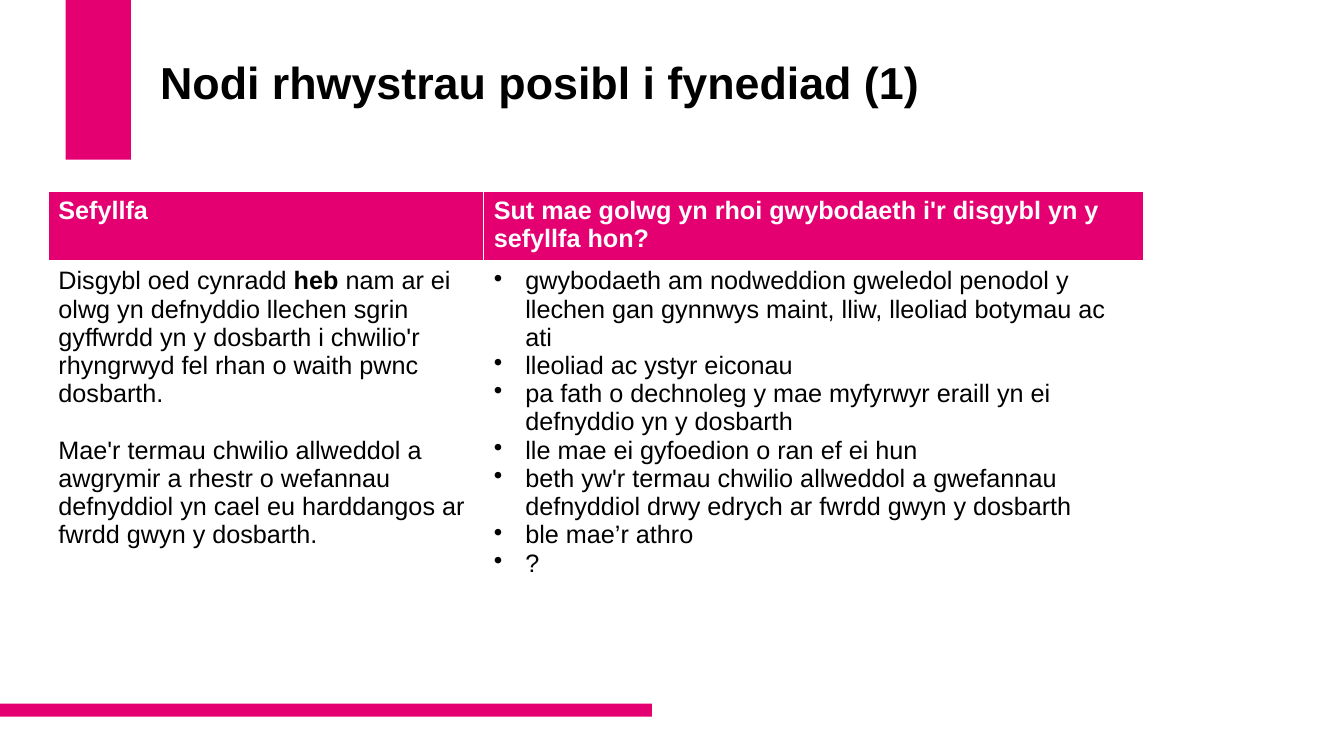
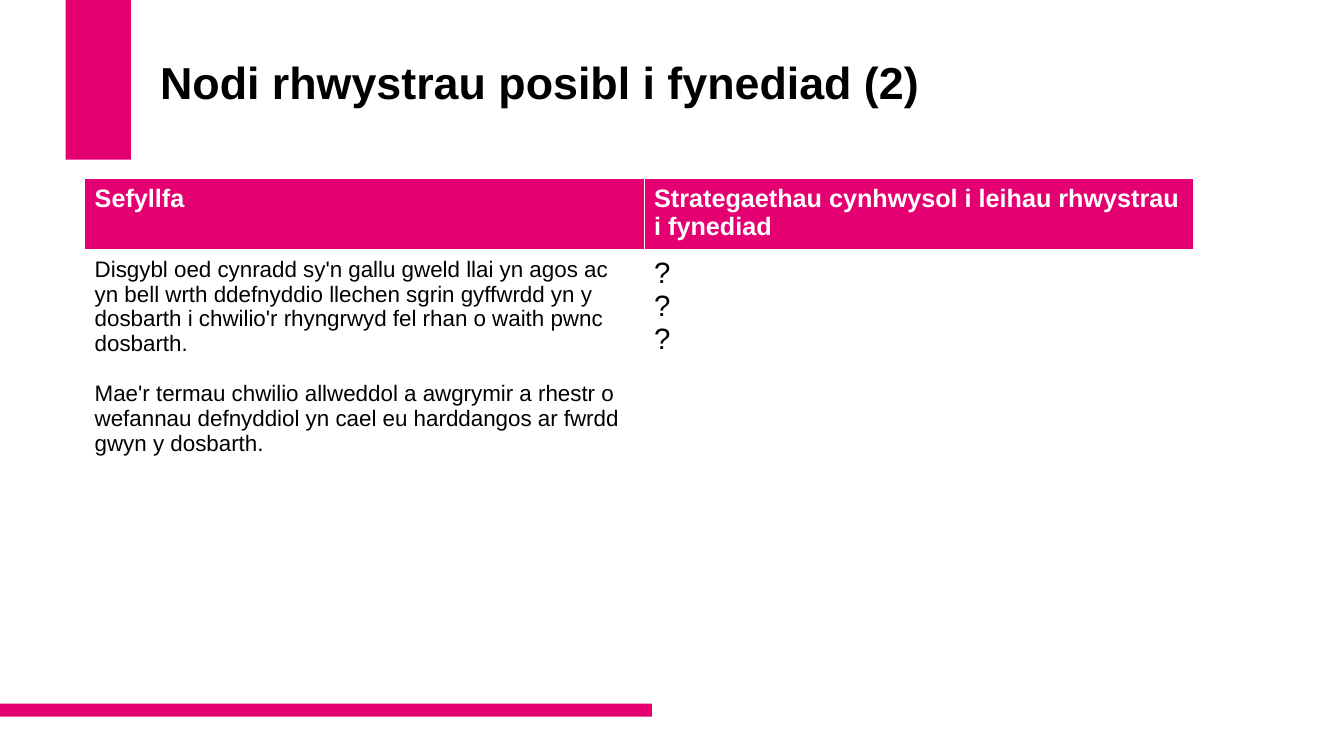
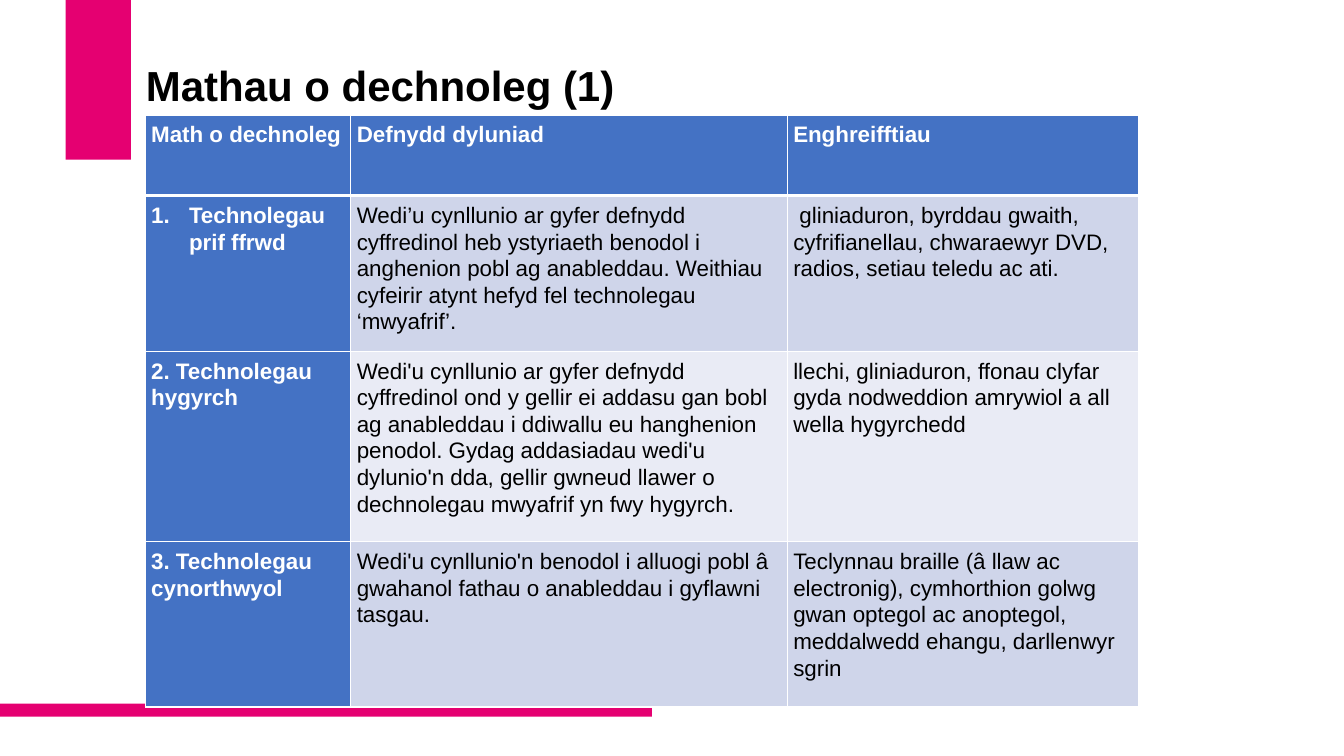
import lxml.etree
import pptx
import pptx.dml.color
import pptx.enum.shapes
import pptx.enum.text
import pptx.oxml.ns
import pptx.util

# Shared style
PINK, BLUE, BLACK, WHITE = "E50071", "4472C4", "000000", "FFFFFF"
BAND_DARK, BAND_LIGHT = "CFD5EA", "E9EBF5"
FONT = "Arial"
LINE_HEIGHT = 1.12
GRID = 12  # columns and rows per inch: 160 x 90 on the slide


def units(count):
    return pptx.util.Inches(count / GRID)


def colour(hex_text):
    return pptx.dml.color.RGBColor.from_string(hex_text)


def add_element(parent, tag, **attributes):
    element = lxml.etree.SubElement(parent, pptx.oxml.ns.qn(tag))
    for name, value in attributes.items():
        element.set(name, str(value))
    return element


def write_text(frame, text, size=18, color=BLACK, bold=False, bullet=None, indent=None,
               line_spacing=None, space_after=None, blank_line=False):
    """Write one string per paragraph; ** switches bold on and off."""
    frame.word_wrap = True
    for index, content in enumerate([text] if isinstance(text, str) else text):
        paragraph = frame.paragraphs[0] if index == 0 else frame.add_paragraph()
        properties = paragraph._p.get_or_add_pPr()
        if indent:
            properties.set("marL", str(units(indent[0])))
            properties.set("indent", str(units(indent[1])))
        if bullet == "number":
            add_element(properties, "a:buAutoNum", type="arabicPeriod")
        elif bullet:
            add_element(properties, "a:buChar", char=bullet)
        if line_spacing:
            paragraph.line_spacing = line_spacing
        if space_after:
            paragraph.space_after = pptx.util.Pt(space_after)
        if blank_line and index:
            paragraph.space_before = pptx.util.Pt(size * LINE_HEIGHT)
        for part, words in enumerate(content.split("**")):
            run = paragraph.add_run()
            run.text = words
            run.font.name = FONT
            run.font.size = pptx.util.Pt(size)
            run.font.bold = bold != (part % 2 == 1)
            run.font.color.rgb = colour(color)


class Deck:
    def __init__(self):
        self.presentation = pptx.Presentation()
        self.presentation.slide_width = units(160)
        self.presentation.slide_height = units(90)
        self.slide = None

    def new_slide(self, title, left=17.88, top=1.44, size=32):
        self.slide = self.presentation.slides.add_slide(self.presentation.slide_layouts[6])
        self.bar(7.8, 0, 7.8, 19)
        self.bar(0, 83.76, 77.6, 1.56)
        self.title(title, left, top, size)

    def bar(self, left, top, width, height):
        shape = self.slide.shapes.add_shape(
            pptx.enum.shapes.MSO_SHAPE.RECTANGLE, *map(units, (left, top, width, height)))
        shape.shadow.inherit = False
        shape.fill.solid()
        shape.fill.fore_color.rgb = colour(PINK)
        shape.line.fill.background()

    def title(self, text, left, top, size):
        box = self.slide.shapes.add_textbox(*map(units, (left, top, 115.2, 17.4)))
        box.text_frame.vertical_anchor = pptx.enum.text.MSO_ANCHOR.MIDDLE
        write_text(box.text_frame, text, size=size, bold=True, line_spacing=0.9)

    def table(self, left, top, columns, rows, cells, header_fill=PINK, body_fills=(WHITE,),
              header_column=False, header_size=18, margins=(1.2, 0.72), **body_format):
        """A cell is its text, or a pair of text and extra format."""
        table = self.slide.shapes.add_table(
            len(rows), len(columns),
            *map(units, (left, top, sum(columns), sum(rows)))).table
        table.horz_banding = False
        for column, width in zip(table.columns, columns):
            column.width = units(width)
        for row, height in zip(table.rows, rows):
            row.height = units(height)
        for row, contents in enumerate(cells):
            for column, content in enumerate(contents):
                text, extra = content if isinstance(content, tuple) else (content, {})
                cell = table.cell(row, column)
                cell.margin_left = cell.margin_right = units(margins[0])
                cell.margin_top = cell.margin_bottom = units(margins[1])
                header = row == 0 or (header_column and column == 0)
                self.borders(cell, top=3 if row == 1 else 1, bottom=3 if row == 0 else 1)
                cell.fill.solid()
                cell.fill.fore_color.rgb = colour(
                    header_fill if header else body_fills[(row - 1) % len(body_fills)])
                style = dict(body_format, **extra)
                if header:
                    style.update(color=WHITE, bold=True)
                if row == 0:
                    style["size"] = header_size
                if text:
                    write_text(cell.text_frame, text, **style)

    def borders(self, cell, top, bottom):
        properties = cell._tc.get_or_add_tcPr()
        for side, width in (("L", 1), ("R", 1), ("T", top), ("B", bottom)):
            line = add_element(properties, "a:ln" + side, w=pptx.util.Pt(width))
            add_element(add_element(line, "a:solidFill"), "a:srgbClr", val=WHITE)


def main():
    deck = Deck()
    search_terms = ("Mae'r termau chwilio allweddol a awgrymir a rhestr o wefannau defnyddiol "
                    "yn cael eu harddangos ar fwrdd gwyn y dosbarth.")

    # Barriers to access: what vision tells the pupil
    deck.new_slide("Nodi rhwystrau posibl i fynediad (1)")
    deck.table(5.76, 22.8, (51.84, 78.6), (7.92, 46.2), (
        ("Sefyllfa", "Sut mae golwg yn rhoi gwybodaeth i'r disgybl yn y sefyllfa hon?"),
        ((["Disgybl oed cynradd **heb** nam ar ei olwg yn defnyddio llechen sgrin gyffwrdd "
           "yn y dosbarth i chwilio'r rhyngrwyd fel rhan o waith pwnc dosbarth.",
           search_terms], {"blank_line": True}),
         (["gwybodaeth am nodweddion gweledol penodol y llechen gan gynnwys maint, lliw, "
           "lleoliad botymau ac ati",
           "lleoliad ac ystyr eiconau",
           "pa fath o dechnoleg y mae myfyrwyr eraill yn ei defnyddio yn y dosbarth",
           "lle mae ei gyfoedion o ran ef ei hun",
           "beth yw'r termau chwilio allweddol a gwefannau defnyddiol drwy edrych ar fwrdd "
           "gwyn y dosbarth",
           "ble mae’r athro",
           "?"], {"bullet": "•", "indent": (3.75, -3.75)})),
    ), margins=(1.2, 0.6))

    # Barriers to access: inclusive strategies
    deck.new_slide("Nodi rhwystrau posibl i fynediad (2)")
    deck.table(10.08, 21.24, (66.6, 65.4), (8.16, 25.32, 5.52, 5.52), (
        ("Sefyllfa", "Strategaethau cynhwysol i leihau rhwystrau i fynediad"),
        ((["Disgybl oed cynradd sy'n gallu gweld llai yn agos ac yn bell wrth ddefnyddio "
           "llechen sgrin gyffwrdd yn y dosbarth i chwilio'r rhyngrwyd fel rhan o waith "
           "pwnc dosbarth.", search_terms], {"blank_line": True}),
         (["?"] * 3, {"size": 21})),
        ("", ""),
        ("", ""),
    ), size=16)

    # Types of technology
    deck.new_slide("Mathau o dechnoleg (1)", left=16.2, top=1.8, size=30)
    deck.table(17.28, 13.68, (24.48, 51.96, 41.88), (9.6, 18.12, 22.68, 19.68), (
        ("Math o dechnoleg", "Defnydd dyluniad", "Enghreifftiau"),
        (("Technolegau prif ffrwd", {"bullet": "number", "indent": (4.5, -4.5)}),
         "Wedi’u cynllunio ar gyfer defnydd cyffredinol heb ystyriaeth benodol i anghenion "
         "pobl ag anableddau. Weithiau cyfeirir atynt hefyd fel technolegau ‘mwyafrif’.",
         ("gliniaduron, byrddau gwaith, cyfrifianellau, chwaraewyr DVD, radios, "
          "setiau teledu ac ati.", {"indent": (0, 0.74)})),
        ("2. Technolegau hygyrch",
         "Wedi'u cynllunio ar gyfer defnydd cyffredinol ond y gellir ei addasu gan bobl ag "
         "anableddau i ddiwallu eu hanghenion penodol. Gydag addasiadau wedi'u dylunio'n "
         "dda, gellir gwneud llawer o dechnolegau mwyafrif yn fwy hygyrch.",
         "llechi, gliniaduron, ffonau clyfar gyda nodweddion amrywiol a all wella "
         "hygyrchedd"),
        ("3. Technolegau cynorthwyol",
         "Wedi'u cynllunio'n benodol i alluogi pobl â gwahanol fathau o anableddau i "
         "gyflawni tasgau.",
         "Teclynnau braille (â llaw ac electronig), cymhorthion golwg gwan optegol ac "
         "anoptegol, meddalwedd ehangu, darllenwyr sgrin"),
    ), header_fill=BLUE, body_fills=(BAND_DARK, BAND_LIGHT), header_column=True,
        header_size=16, margins=(0.72, 0.72), size=16, line_spacing=1.07, space_after=8)

    deck.presentation.save("out.pptx")


if __name__ == "__main__":
    main()
